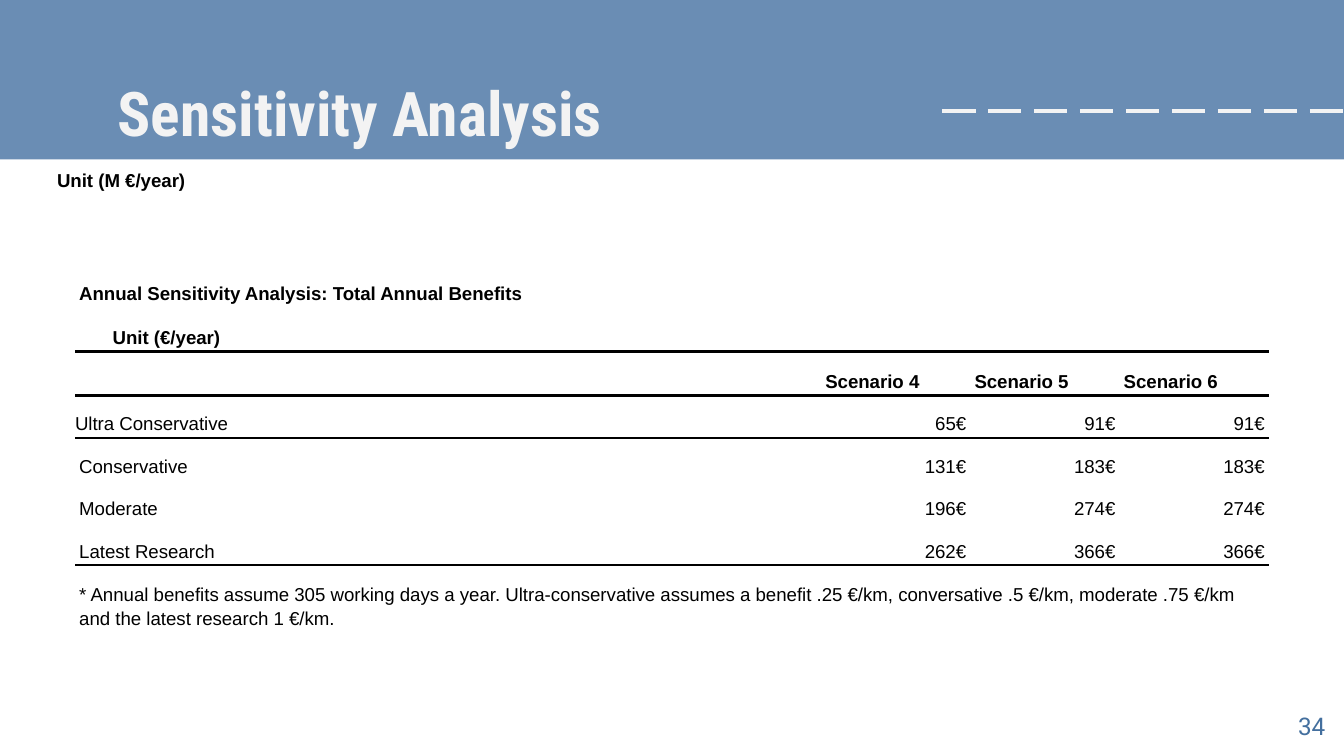
from collections import namedtuple

from lxml import etree
from pptx import Presentation
from pptx.dml.color import RGBColor
from pptx.enum import dml, shapes, text
from pptx.oxml import ns
from pptx.util import Pt

Theme = namedtuple("Theme", "band light ink accent title_size body_size number_size")
theme = Theme(
    band=RGBColor.from_string("6A8DB4"),
    light=RGBColor.from_string("F3F3F3"),
    ink=RGBColor.from_string("000000"),
    accent=RGBColor.from_string("436F9E"),
    title_size=33,
    body_size=10,
    number_size=13,
)
RIGHT = text.PP_ALIGN.RIGHT


def add_label(box, words, font_name, size, color, bold=False, align=None):
    left, top, width, height = map(Pt, box)
    frame = slide.shapes.add_textbox(left, top, width, height).text_frame
    frame.word_wrap = True
    frame.margin_left = frame.margin_right = Pt(7.2)
    frame.margin_top = frame.margin_bottom = Pt(7.2)
    frame.text = words
    paragraph = frame.paragraphs[0]
    paragraph.alignment = align
    font = paragraph.runs[0].font
    font.name, font.size, font.bold = font_name, Pt(size), bold
    font.color.rgb = color


def set_border(cell, side, visible):
    line = etree.Element(ns.qn(f"a:ln{side}"), w=str(Pt(1.5)))
    if visible:
        fill = etree.SubElement(line, ns.qn("a:solidFill"))
        etree.SubElement(fill, ns.qn("a:srgbClr"), val=str(theme.ink))
    else:
        etree.SubElement(line, ns.qn("a:noFill"))
    cell._tc.get_or_add_tcPr().insert("LRTB".index(side), line)


presentation = Presentation()
presentation.slide_width, presentation.slide_height = Pt(720), Pt(405)
slide = presentation.slides.add_slide(presentation.slide_layouts[6])

# Header band with dashed line
band = slide.shapes.add_shape(shapes.MSO_SHAPE.RECTANGLE, Pt(-1.5), Pt(0), Pt(723), Pt(85.5))
band.shadow.inherit = False
band.fill.solid()
band.fill.fore_color.rgb = theme.band
band.line.fill.background()

dashes = slide.shapes.add_connector(
    shapes.MSO_CONNECTOR.STRAIGHT, Pt(504.7), Pt(59.5), Pt(720), Pt(59.5))
dashes.line.color.rgb = theme.light
dashes.line.width = Pt(2.25)
dashes.line.dash_style = dml.MSO_LINE.LONG_DASH
etree.SubElement(dashes._element.spPr, ns.qn("a:effectLst"))

# Title and page number
add_label((56, 33, 608, 45.5), "Sensitivity Analysis", "Roboto Condensed",
          theme.title_size, theme.light, bold=True)
add_label((674, 374, 43, 31), "34", "Roboto", theme.number_size, theme.accent, align=RIGHT)

# Benefits table: {column: text} for each row
scenarios = {5: "Scenario 4", 6: "Scenario 5", 7: "Scenario 6"}
benefits = [
    ("Ultra Conservative", 65, 91, 91),
    ("Conservative", 131, 183, 183),
    ("Moderate", 196, 274, 274),
    ("Latest Research", 262, 366, 366),
]
rows = [
    {0: "Annual Sensitivity Analysis: Total Annual Benefits"},
    {0: "Unit (€/year)"},
    scenarios,
    *({0: name, **{column: f"{value}€" for column, value in zip(scenarios, values)}}
      for name, *values in benefits),
    {0: "* Annual benefits assume 305 working days a year. Ultra-conservative assumes "
        "a benefit .25 €/km, conversative .5 €/km, moderate .75 €/km and the latest "
        "research 1 €/km."},
]
heights = [19.5, 23.5, 23.5] + [22.75] * 4 + [36]
column_count, column_width = 8, 79.95
spans = {0: 8, 3: 5, 4: 5, 5: 5, 6: 5, 7: 8}
ruled_rows = {1, 2, 3, 6}

table = slide.shapes.add_table(
    len(rows), column_count, Pt(40.2), Pt(145.3),
    Pt(column_width * column_count), Pt(sum(heights))).table
table.first_row = table.horz_banding = False
for column in table.columns:
    column.width = Pt(column_width)

for index, (row, height) in enumerate(zip(rows, heights)):
    table.rows[index].height = Pt(height)
    for column in range(column_count):
        cell = table.cell(index, column)
        cell.vertical_anchor = text.MSO_ANCHOR.BOTTOM
        cell.margin_left = cell.margin_right = Pt(2.25)
        cell.margin_top = cell.margin_bottom = Pt(1.5)
        cell.fill.background()
        for side in "LRTB":
            ruled = {"T": index - 1, "B": index}.get(side) in ruled_rows
            set_border(cell, side, ruled)

        paragraph = cell.text_frame.paragraphs[0]
        paragraph.line_spacing = 1.15
        if column not in row:
            # Empty cells need a small type size to keep the row height
            etree.SubElement(paragraph._p, ns.qn("a:endParaRPr"),
                             sz=str(theme.body_size * 100))
            continue
        paragraph.text = row[column]
        if index == 1 or (index > 2 and column in scenarios):
            paragraph.alignment = RIGHT
        font = paragraph.runs[0].font
        font.name, font.size, font.bold = "Arial", Pt(theme.body_size), index < 3
        font.color.rgb = theme.ink
    if index in spans:
        table.cell(index, 0).merge(table.cell(index, spans[index] - 1))

# The first benefit row starts flush with the rules
table.cell(3, 0).margin_left = Pt(0)

# Unit note under the band
add_label((23.5, 84.2, 236, 26.5), "Unit (M €/year)", "Arial",
          theme.body_size, theme.ink, bold=True)

presentation.save("out.pptx")
